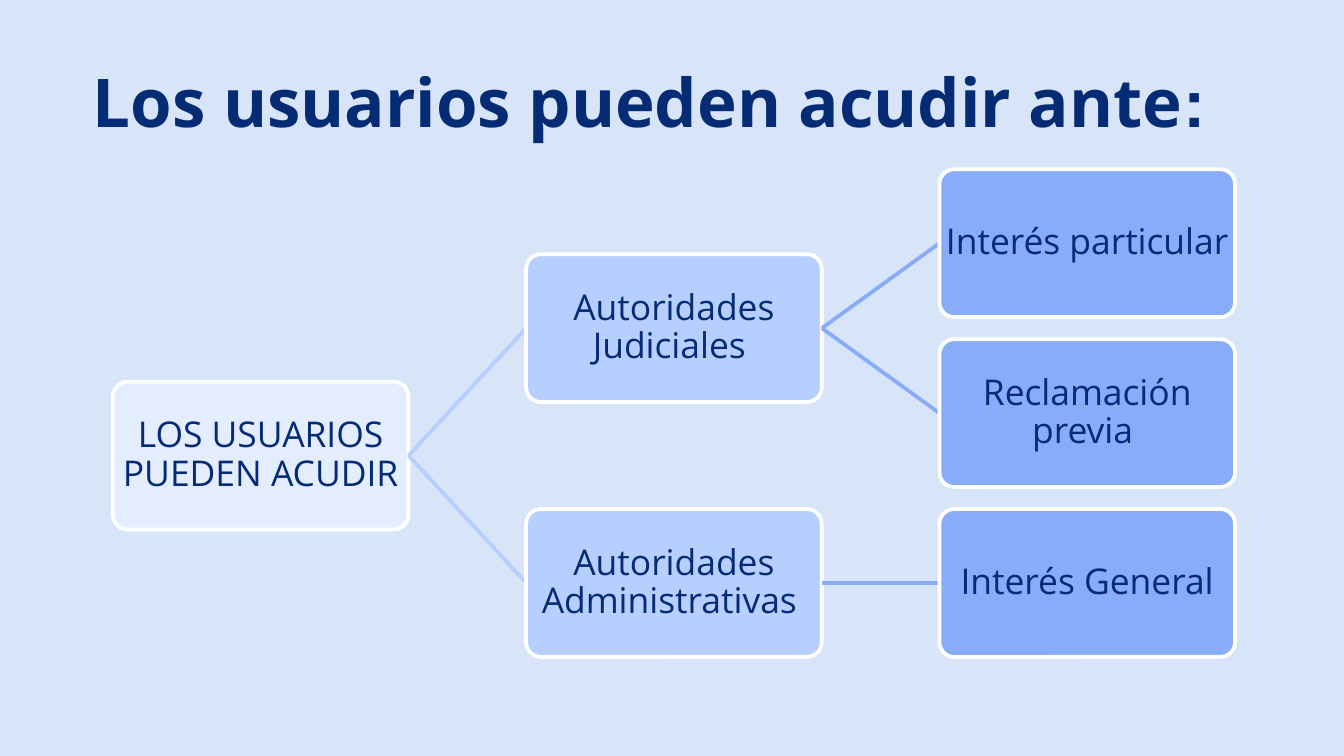
from pptx import Presentation
from pptx import util as u
from pptx.dml.color import RGBColor
from pptx.enum import shapes, text
from pptx.oxml.ns import qn
from lxml import etree

COLOURS = {
    "background": "D8E4F7",
    "ink": "042B74",
    "border": "FFFFFF",
    "level0": "E4EDFE",
    "level1": "B7CFFF",
    "level2": "88ACF8",
}
WIDTH = u.Inches(10)
HEIGHT = WIDTH * 9 // 16
TITLE_PERCENT = (2.3, 7.15, 92, 12.6)
TREE_PERCENT = (8.4, 22.4, 83.5, 64.5)
COLUMNS, ROWS = 3, 3
NODE_WIDTH, NODE_HEIGHT = u.Inches(2.2), u.Inches(1.1)

AUTHORITIES = ("LOS USUARIOS PUEDEN ACUDIR ", [
    ("Autoridades Judiciales ", [
        ("Interés particular ", []),
        ("Reclamación previa ", []),
    ]),
    ("Autoridades Administrativas ", [
        ("Interés General", []),
    ]),
])


def colour(key):
    return RGBColor.from_string(COLOURS[key])


def area(percent):
    left, top, width, height = percent
    return (int(left * WIDTH / 100), int(top * HEIGHT / 100),
            int(width * WIDTH / 100), int(height * HEIGHT / 100))


def style(run, size, font="Open Sans", bold=False):
    run.font.size = u.Pt(size)
    run.font.name = font
    run.font.bold = bold
    run.font.color.rgb = colour("ink")


def add_title(slide, box):
    frame = slide.shapes.add_textbox(*box).text_frame
    frame.word_wrap = True
    frame.auto_size = text.MSO_AUTO_SIZE.SHAPE_TO_FIT_TEXT
    heading = frame.paragraphs[0]
    heading.alignment = text.PP_ALIGN.CENTER
    for words, font in (("Los usuarios pueden acudir ante", "Open Sans"),
                        (":", "Arial")):
        run = heading.add_run()
        run.text = words
        style(run, 36, font, bold=True)


def add_node(slide, label, level, left, middle):
    node = slide.shapes.add_shape(
        shapes.MSO_SHAPE.ROUNDED_RECTANGLE,
        left, middle - NODE_HEIGHT // 2, NODE_WIDTH, NODE_HEIGHT)
    node.adjustments[0] = 0.1
    node.shadow.inherit = False
    node.fill.solid()
    node.fill.fore_color.rgb = colour(f"level{level}")
    node.line.color.rgb = colour("border")
    node.line.width = u.Pt(2)
    frame = node.text_frame
    frame.word_wrap = True
    frame.vertical_anchor = text.MSO_ANCHOR.MIDDLE
    frame.margin_left = frame.margin_right = u.Inches(0.01)
    frame.margin_top = frame.margin_bottom = u.Inches(0.01)
    frame.text = label
    caption = frame.paragraphs[0]
    caption.alignment = text.PP_ALIGN.CENTER
    caption.line_spacing = 0.9
    style(caption.runs[0], 19)


def add_branch(slide, level, start, end):
    branch = slide.shapes.add_connector(
        shapes.MSO_CONNECTOR.STRAIGHT, *start, *end)
    branch.line.color.rgb = colour(f"level{level}")
    branch.line.width = u.Pt(2)
    etree.SubElement(branch._element.spPr, qn("a:effectLst"))


def assign_rows(topic, leaf_rows):
    label, children = topic
    placed = [assign_rows(child, leaf_rows) for child in children]
    if placed:
        row = sum(child[1] for child in placed) / len(placed)
    else:
        row = next(leaf_rows)
    return label, row, placed


def add_tree(slide, box, root):
    left, top, width, height = box
    column_step = (width - NODE_WIDTH) / (COLUMNS - 1)
    row_step = (height - NODE_HEIGHT) / (ROWS - 1)

    def draw(topic, level, parent_end=None):
        label, row, children = topic
        node_left = int(left + level * column_step)
        middle = int(top + NODE_HEIGHT / 2 + row * row_step)
        if parent_end:
            add_branch(slide, level, parent_end, (node_left, middle))
        add_node(slide, label, level, node_left, middle)
        for child in children:
            draw(child, level + 1, (node_left + NODE_WIDTH, middle))

    draw(assign_rows(root, iter(range(ROWS))), 0)


def main():
    deck = Presentation()
    deck.slide_width, deck.slide_height = WIDTH, HEIGHT
    slide = deck.slides.add_slide(deck.slide_layouts[6])
    slide.background.fill.solid()
    slide.background.fill.fore_color.rgb = colour("background")
    add_title(slide, area(TITLE_PERCENT))
    add_tree(slide, area(TREE_PERCENT), AUTHORITIES)
    deck.save("out.pptx")


if __name__ == "__main__":
    main()
